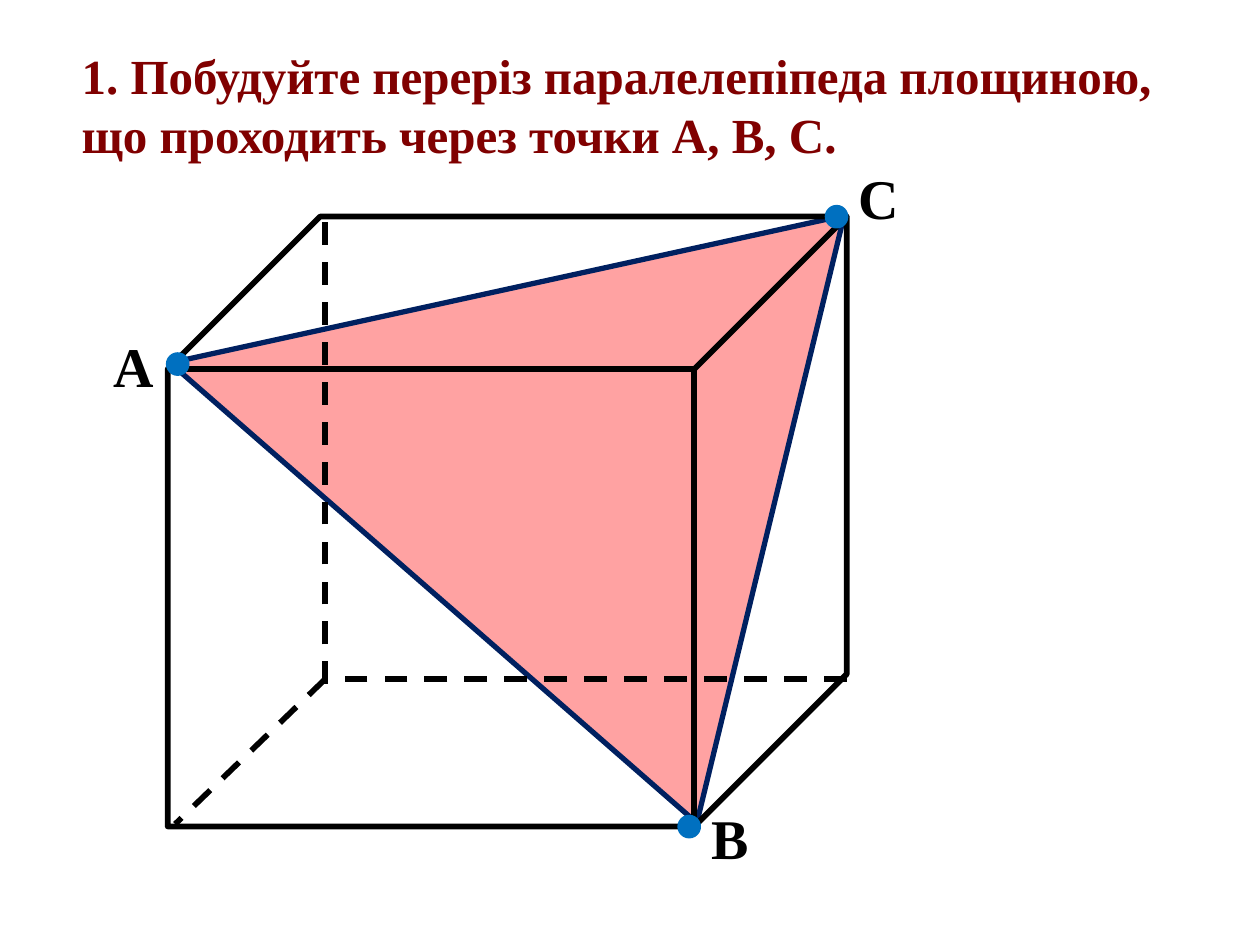
from typing import NamedTuple

import pptx
import pptx.dml.color
import pptx.enum.dml
import pptx.enum.shapes
import pptx.enum.text
import pptx.oxml
import pptx.oxml.ns
import pptx.util
from pptx.dml.color import RGBColor
from pptx.util import Pt

BLACK = RGBColor(0x00, 0x00, 0x00)
MAROON = RGBColor(0x80, 0x00, 0x00)
NAVY = RGBColor(0x00, 0x20, 0x60)
BLUE = RGBColor(0x00, 0x70, 0xC0)
CORAL = RGBColor(0xFF, 0x50, 0x50)

FONT = "Times New Roman"
EDGE_WIDTH = 3.25
DOT_SIZE = 11.5


class Point(NamedTuple):
    x: float
    y: float


class Vertex(NamedTuple):
    name: str
    section: Point  # corner of the section triangle
    dot: Point  # top left of the dot
    label: Point  # top left of the letter's box
    label_width: float


VERTICES = [
    Vertex("А", Point(97.2, 207.4), Point(95.8, 202.3), Point(57.6, 185.8), 38.2),
    Vertex("В", Point(398.2, 470.2), Point(388.1, 466.6), Point(399.6, 455.8), 36),
    Vertex("С", Point(482.4, 123.1), Point(472.3, 118.1), Point(483.8, 90), 38.2),
]

HIDDEN_CORNER = Point(185.8, 388.1)
HIDDEN_EDGES = [
    (Point(185.8, 391), Point(185.8, 118.1)),
    (Point(483.8, 388.1), HIDDEN_CORNER),
    (HIDDEN_CORNER, Point(100.1, 470.9)),
]


def add_text(slide, text: str, *, left: float, top: float, width: float, height: float,
             size: float, color: RGBColor, wrap: bool) -> None:
    box = slide.shapes.add_textbox(Pt(left), Pt(top), Pt(width), Pt(height))
    box.text_frame.word_wrap = wrap
    box.text_frame.auto_size = pptx.enum.text.MSO_AUTO_SIZE.SHAPE_TO_FIT_TEXT
    run = box.text_frame.paragraphs[0].add_run()
    run.text = text
    run.font.name = FONT
    run.font.size = Pt(size)
    run.font.bold = True
    run.font.color.rgb = color


def set_line(line, color: RGBColor, width: float) -> None:
    line.color.rgb = color
    line.width = Pt(width)


def add_section(slide, corners: list[Point]) -> None:
    first, *others = [(Pt(corner.x), Pt(corner.y)) for corner in corners]
    builder = slide.shapes.build_freeform(*first)
    builder.add_line_segments(others, close=True)
    shape = builder.convert_to_shape()
    shape.shadow.inherit = False
    shape.fill.solid()
    shape.fill.fore_color.rgb = CORAL
    color_element = shape.fill._xPr.find(".//" + pptx.oxml.ns.qn("a:srgbClr"))
    alpha = pptx.oxml.parse_xml(f'<a:alpha {pptx.oxml.ns.nsdecls("a")} val="53000"/>')
    color_element.append(alpha)
    set_line(shape.line, NAVY, 3)


def add_hidden_edge(slide, start: Point, end: Point) -> None:
    connector = slide.shapes.add_connector(
        pptx.enum.shapes.MSO_CONNECTOR.STRAIGHT,
        Pt(start.x), Pt(start.y), Pt(end.x), Pt(end.y))
    set_line(connector.line, BLACK, EDGE_WIDTH)
    connector.line.dash_style = pptx.enum.dml.MSO_LINE.DASH
    effects = pptx.oxml.parse_xml(f'<a:effectLst {pptx.oxml.ns.nsdecls("a")}/>')
    connector._element.spPr.append(effects)


def add_box(slide) -> None:
    cube = slide.shapes.add_shape(pptx.enum.shapes.MSO_SHAPE.CUBE,
                                  Pt(95.8), Pt(123.8), Pt(388.1), Pt(348.5))
    cube.shadow.inherit = False
    cube.fill.background()
    set_line(cube.line, BLACK, EDGE_WIDTH)


def add_dot(slide, corner: Point) -> None:
    dot = slide.shapes.add_shape(pptx.enum.shapes.MSO_SHAPE.OVAL,
                                 Pt(corner.x), Pt(corner.y), Pt(DOT_SIZE), Pt(DOT_SIZE))
    dot.shadow.inherit = False
    dot.fill.solid()
    dot.fill.fore_color.rgb = BLUE
    set_line(dot.line, BLUE, 2)


def main() -> None:
    presentation = pptx.Presentation()
    presentation.slide_width = Pt(720)
    presentation.slide_height = Pt(540)
    slide = presentation.slides.add_slide(presentation.slide_layouts[6])

    # Section triangle, in the order A, C, B
    a, b, c = [vertex.section for vertex in VERTICES]
    add_section(slide, [a, c, b])

    # Task
    add_text(slide, "1. Побудуйте переріз паралелепіпеда площиною, "
             "що проходить через точки А, В, С.",
             left=39.6, top=22.3, width=652.3, height=74.9,
             size=28, color=MAROON, wrap=True)

    # Parallelepiped
    for start, end in HIDDEN_EDGES:
        add_hidden_edge(slide, start, end)
    add_box(slide)

    # Letters and dots of the given points
    for vertex in VERTICES:
        add_text(slide, vertex.name, left=vertex.label.x, top=vertex.label.y,
                 width=vertex.label_width, height=46.1,
                 size=32, color=BLACK, wrap=False)
    for vertex in VERTICES:
        add_dot(slide, vertex.dot)

    presentation.save("out.pptx")


if __name__ == "__main__":
    main()
